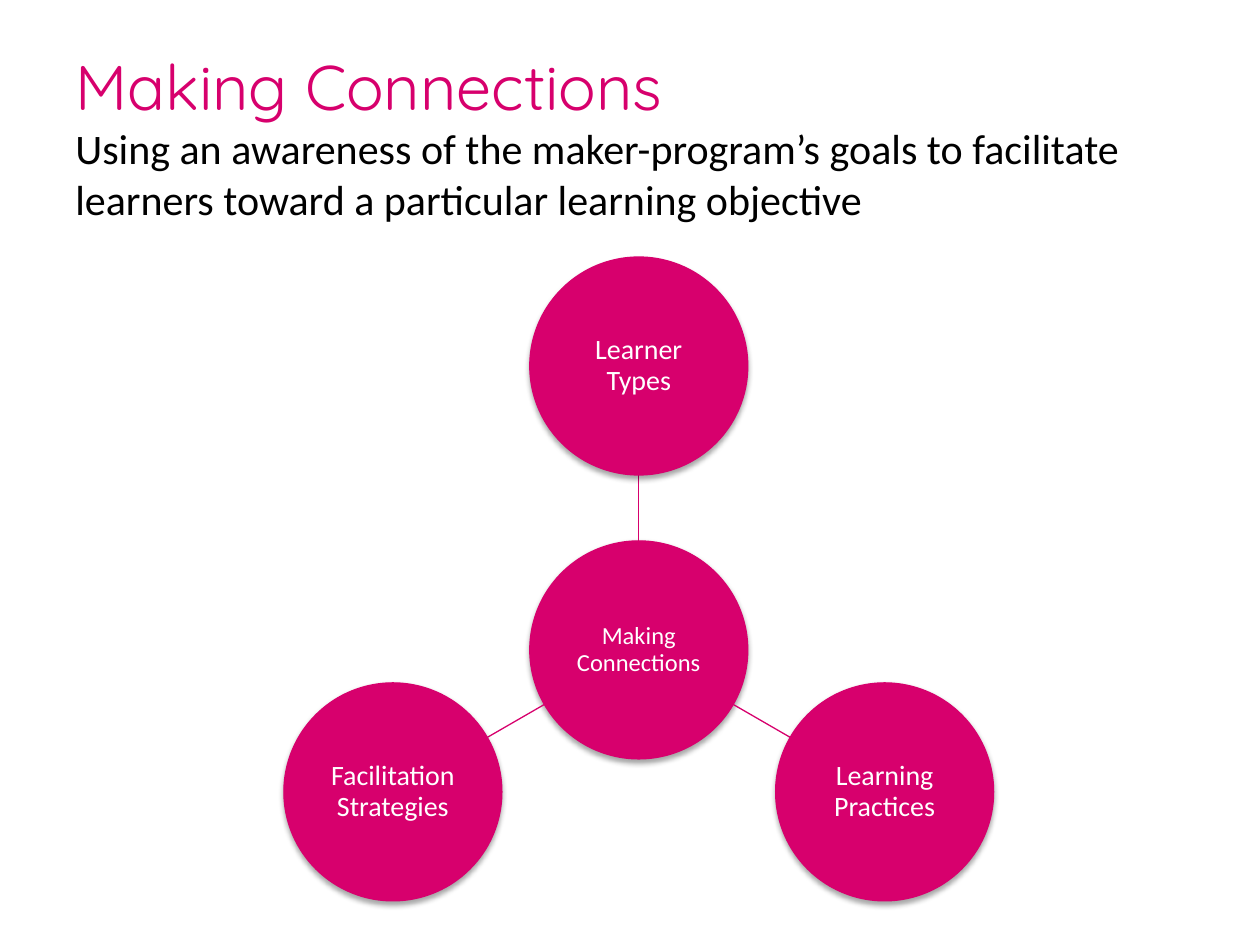
from math import cos, radians, sin

from lxml import etree
from pptx import Presentation
from pptx.dml.color import RGBColor
from pptx.enum.shapes import MSO_CONNECTOR, MSO_SHAPE
from pptx.enum.text import MSO_ANCHOR, PP_ALIGN
from pptx.oxml.ns import qn
from pptx.util import Inches, Pt

OVAL = MSO_SHAPE.OVAL
STRAIGHT = MSO_CONNECTOR.STRAIGHT
MIDDLE = MSO_ANCHOR.MIDDLE
CENTER = PP_ALIGN.CENTER

COLORS = {"pink": "D7006D", "black": "000000", "white": "FFFFFF"}
DIAMETER = 1.73
SATELLITES = [
    ("Learner Types", -90),
    ("Learning Practices", 30),
    ("Facilitation Strategies", 150),
]


def color(name):
    return RGBColor.from_string(COLORS[name])


def add_run(paragraph, text, size, font_name, color_name):
    run = paragraph.add_run()
    run.text = text
    run.font.size = Pt(size)
    run.font.name = font_name
    run.font.color.rgb = color(color_name)


def add_shadow(shape):
    shape.shadow.inherit = False
    effects = shape._element.spPr.find(qn("a:effectLst"))
    shadow = etree.SubElement(
        effects, qn("a:outerShdw"), blurRad=str(Pt(3.1)), dist=str(Pt(1.8)),
        dir="5400000", rotWithShape="0",
    )
    tint = etree.SubElement(shadow, qn("a:srgbClr"), val=COLORS["black"])
    etree.SubElement(tint, qn("a:alpha"), val="35000")


def add_heading(slide, left, top, width, height):
    box = slide.shapes.add_textbox(
        Inches(left), Inches(top), Inches(width), Inches(height)
    )
    frame = box.text_frame
    frame.word_wrap = True
    frame.vertical_anchor = MIDDLE
    paragraph = frame.paragraphs[0]
    add_run(paragraph, "Making Connections", 36, "Quicksand", "pink")
    paragraph.add_line_break()
    add_run(
        paragraph,
        "Using an awareness of the maker-program’s goals to facilitate "
        "learners toward a particular learning objective",
        24, "Calibri", "black",
    )


def add_circle(slide, center_x, center_y, text, size):
    circle = slide.shapes.add_shape(
        OVAL, Inches(center_x - DIAMETER / 2), Inches(center_y - DIAMETER / 2),
        Inches(DIAMETER), Inches(DIAMETER),
    )
    circle.fill.solid()
    circle.fill.fore_color.rgb = color("pink")
    circle.line.color.rgb = color("pink")
    circle.line.width = Pt(0.75)
    add_shadow(circle)
    frame = circle.text_frame
    frame.word_wrap = True
    frame.vertical_anchor = MIDDLE
    frame.margin_left = frame.margin_right = Inches(0.01)
    frame.margin_top = frame.margin_bottom = Inches(0.01)
    paragraph = frame.paragraphs[0]
    paragraph.alignment = CENTER
    paragraph.line_spacing = 0.9
    add_run(paragraph, text, size, "Calibri", "white")


def add_spoke(slide, start, end):
    spoke = slide.shapes.add_connector(
        STRAIGHT, *(Inches(value) for value in (*start, *end))
    )
    spoke.line.color.rgb = color("pink")
    spoke.line.width = Pt(0.75)
    etree.SubElement(spoke._element.spPr, qn("a:effectLst"))


def add_radial_diagram(slide, left, top, width, height):
    orbit = (height - DIAMETER) / 1.5
    center_x = left + width / 2
    center_y = top + DIAMETER / 2 + orbit

    def point(angle, distance):
        return (
            center_x + distance * cos(radians(angle)),
            center_y + distance * sin(radians(angle)),
        )

    add_circle(slide, center_x, center_y, "Making Connections", 14)
    for text, angle in SATELLITES:
        add_spoke(
            slide, point(angle, DIAMETER / 2), point(angle, orbit - DIAMETER / 2)
        )
        add_circle(slide, *point(angle, orbit), text, 16)


def main():
    presentation = Presentation()
    presentation.slide_width = Inches(10)
    presentation.slide_height = Inches(7.5)
    slide = presentation.slides.add_slide(presentation.slide_layouts[6])
    add_heading(slide, 0.5, 0.3, 9, 1.55)
    add_radial_diagram(slide, 2.26, 2.04, 5.62, 5.11)
    presentation.save("out.pptx")


if __name__ == "__main__":
    main()
